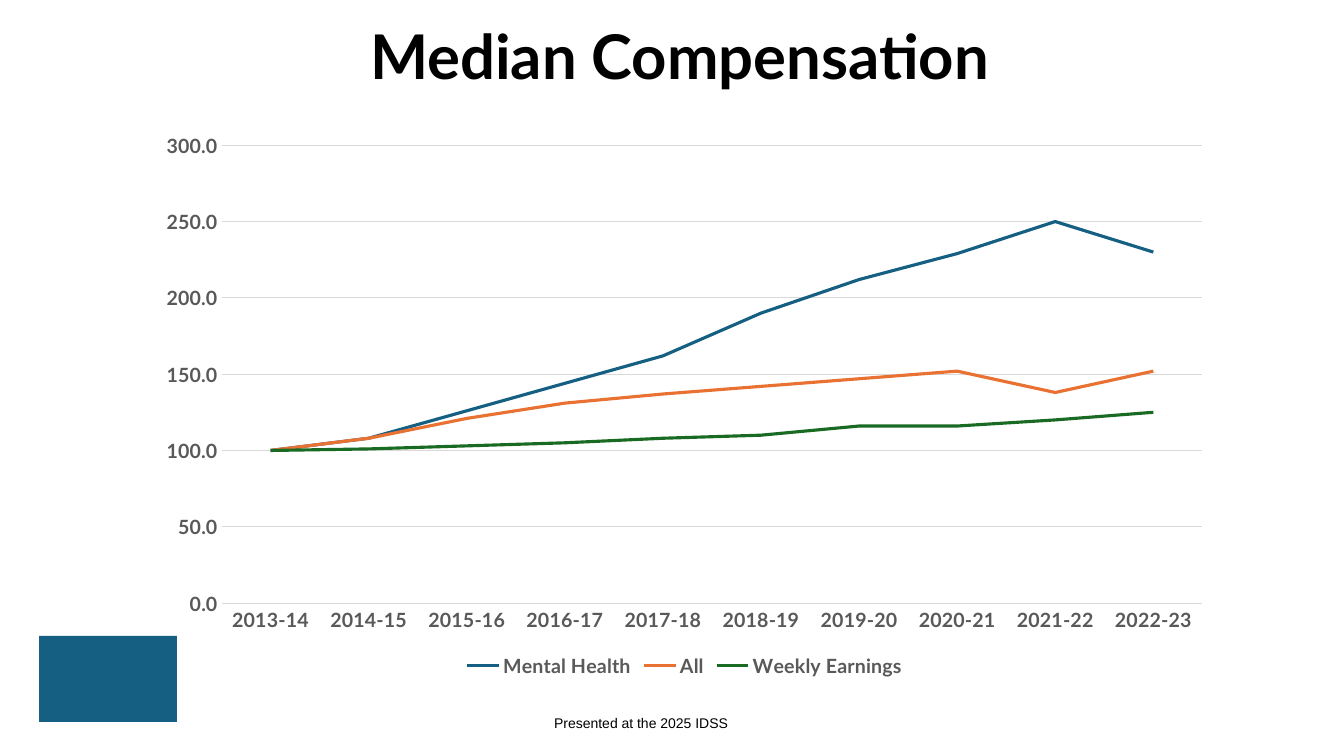
import pptx
import pptx.chart.data
import pptx.dml.color
import pptx.enum.chart
import pptx.enum.shapes
import pptx.enum.text
import pptx.util

EMU_PER_PX = 914400 / 100.8
COLORS = {
    "black": "000000",
    "label": "595959",
    "grid": "D9D9D9",
    "blue": "156082",
    "orange": "E97132",
    "green": "196B24",
}
YEARS = [f"{year}-{(year + 1) % 100}" for year in range(2013, 2023)]
SERIES = [
    ("Mental Health", "blue", [100, 108, 126, 144, 162, 190, 212, 229, 250, 230]),
    ("All", "orange", [100, 108, 121, 131, 137, 142, 147, 152, 138, 152]),
    ("Weekly Earnings", "green", [100, 101, 103, 105, 108, 110, 116, 116, 120, 125]),
]


def px(length):
    return pptx.util.Emu(round(length * EMU_PER_PX))


def color(name):
    return pptx.dml.color.RGBColor.from_string(COLORS[name])


class SlideBuilder:
    heading_font = "Lato"
    footer_font = "Arial"

    def __init__(self, presentation):
        self.slide = presentation.slides.add_slide(presentation.slide_layouts[5])

    def style_font(self, font, name, size, color_name, bold=False):
        font.name = name
        font.size = pptx.util.Pt(size)
        font.bold = bold
        font.color.rgb = color(color_name)

    def style_line(self, line, color_name, width):
        line.color.rgb = color(color_name)
        line.width = pptx.util.Pt(width)

    def fill_text(self, shape, text, font_name, size, anchor, bold=False):
        frame = shape.text_frame
        frame.text = text
        frame.word_wrap = True
        frame.auto_size = pptx.enum.text.MSO_AUTO_SIZE.NONE
        frame.vertical_anchor = anchor
        paragraph = frame.paragraphs[0]
        paragraph.alignment = pptx.enum.text.PP_ALIGN.CENTER
        self.style_font(paragraph.font, font_name, size, "black", bold)
        return frame

    def title(self, text, left, top, width, height):
        shape = self.slide.shapes.title
        shape.left, shape.top = px(left), px(top)
        shape.width, shape.height = px(width), px(height)
        frame = self.fill_text(shape, text, self.heading_font, 44,
                               pptx.enum.text.MSO_ANCHOR.TOP, bold=True)
        frame.paragraphs[0].line_spacing = 0.9

    def footer(self, text, left, top, width, height):
        shape = self.slide.shapes.add_textbox(px(left), px(top), px(width), px(height))
        frame = self.fill_text(shape, text, self.footer_font, 10,
                               pptx.enum.text.MSO_ANCHOR.BOTTOM)
        frame.margin_left = frame.margin_right = 0
        frame.margin_top = frame.margin_bottom = 0

    def block(self, color_name, left, top, width, height):
        shape = self.slide.shapes.add_shape(
            pptx.enum.shapes.MSO_SHAPE.RECTANGLE,
            px(left), px(top), px(width), px(height))
        shape.shadow.inherit = False
        shape.fill.solid()
        shape.fill.fore_color.rgb = color(color_name)
        shape.line.fill.background()

    def line_chart(self, categories, series_rows, left, top, width, height):
        data = pptx.chart.data.CategoryChartData(number_format="0.0")
        data.categories = categories
        for name, _, values in series_rows:
            data.add_series(name, values)
        chart = self.slide.shapes.add_chart(
            pptx.enum.chart.XL_CHART_TYPE.LINE,
            px(left), px(top), px(width), px(height), data).chart
        chart.has_title = False
        self.style_font(chart.font, self.heading_font, 10, "black")

        # Series
        chart.plots[0].vary_by_categories = False
        for series, (_, color_name, _) in zip(chart.plots[0].series, series_rows):
            series.smooth = False
            series.marker.style = pptx.enum.chart.XL_MARKER_STYLE.NONE
            self.style_line(series.format.line, color_name, 2.25)

        # Axes
        for axis in (chart.category_axis, chart.value_axis):
            axis.major_tick_mark = pptx.enum.chart.XL_TICK_MARK.NONE
            axis.minor_tick_mark = pptx.enum.chart.XL_TICK_MARK.NONE
            self.style_font(axis.tick_labels.font, self.heading_font, 14, "label", True)
        self.style_line(chart.category_axis.format.line, "grid", 0.75)
        value_axis = chart.value_axis
        value_axis.minimum_scale, value_axis.maximum_scale = 0, 300
        value_axis.major_unit = 50
        value_axis.tick_labels.number_format = "0.0"
        value_axis.tick_labels.number_format_is_linked = False
        value_axis.format.line.fill.background()
        value_axis.has_major_gridlines = True
        self.style_line(value_axis.major_gridlines.format.line, "grid", 0.75)

        # Legend
        chart.has_legend = True
        chart.legend.position = pptx.enum.chart.XL_LEGEND_POSITION.BOTTOM
        chart.legend.include_in_layout = False
        self.style_font(chart.legend.font, self.heading_font, 14, "label", True)


def main():
    presentation = pptx.Presentation()
    presentation.slide_width = px(1344)
    presentation.slide_height = px(756)
    builder = SlideBuilder(presentation)

    # Emblem and footer
    builder.block("blue", 39, 636, 138, 86)
    builder.footer("Presented at the 2025 IDSS", 414, 711, 454, 20)

    # Title and chart
    builder.title("Median Compensation", 145, 21, 1070, 76)
    builder.line_chart(YEARS, SERIES, 145, 122, 1079, 560)

    presentation.save("out.pptx")


if __name__ == "__main__":
    main()
